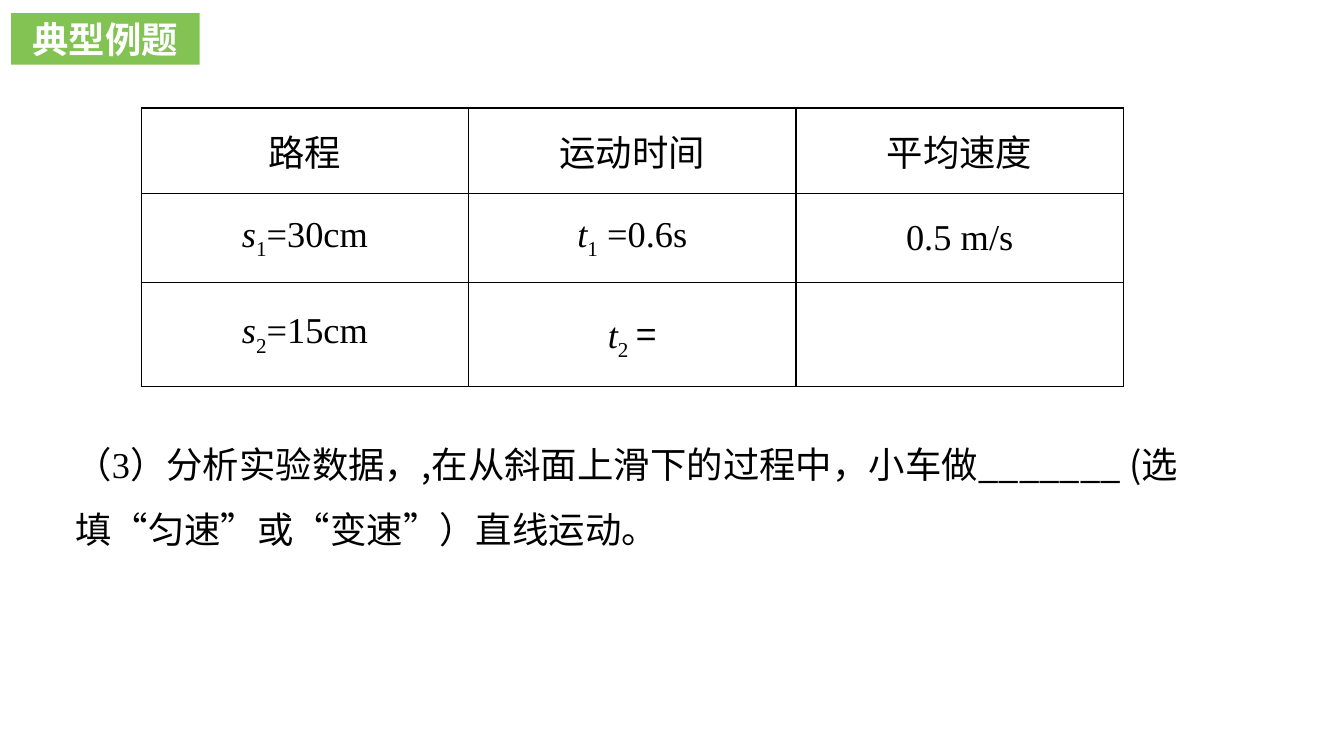
import pptx
import pptx.dml.color
import pptx.enum.text
import pptx.oxml
import pptx.oxml.ns
import pptx.util
from pptx.util import Cm

BLACK = pptx.dml.color.RGBColor(0x00, 0x00, 0x00)
WHITE = pptx.dml.color.RGBColor(0xFF, 0xFF, 0xFF)
GREEN = pptx.dml.color.RGBColor(0x83, 0xC3, 0x53)
SERIF = "Times New Roman"
SANS = "Noto Sans CJK SC"
CENTER = pptx.enum.text.PP_ALIGN.CENTER
MIDDLE = pptx.enum.text.MSO_ANCHOR.MIDDLE

HEADING = "典型例题"
QUESTION = [
    ("（3）", {"name": SERIF}),
    ("分析实验数据，,在从斜面上滑下的过程中，小车做_______ (选填“匀速”或“变速”）直线运动。", {"name": SANS}),
]


def quantity(symbol, index, value, value_font=SERIF):
    """Runs for an italic symbol with a subscript, followed by its value."""
    return [
        (symbol, {"name": SERIF, "italic": True}),
        (index, {"name": SERIF, "baseline": -25000}),
        (value, {"name": value_font}),
    ]


MEASUREMENTS = [
    [[(label, {"name": SANS})] for label in ("路程", "运动时间", "平均速度")],
    [quantity("s", "1", "=30cm"), quantity("t", "1", " =0.6s"), [("0.5 m/s", {"name": SERIF})]],
    [quantity("s", "2", "=15cm"), quantity("t", "2", " =", SANS), []],
]
COLUMN_WIDTH = Cm(8.25)
ROW_HEIGHTS = [Cm(2.16), Cm(2.24), Cm(2.62)]


def add_runs(paragraph, runs, color=BLACK):
    for text, formats in runs:
        run = paragraph.add_run()
        run.text = text
        run.font.color.rgb = color
        properties = run._r.get_or_add_rPr()
        settings = {"size": pptx.util.Pt(26), "bold": False, "italic": False, **formats}
        baseline = settings.pop("baseline", 0)
        if baseline:
            properties.set("baseline", str(baseline))
        for key, value in settings.items():
            setattr(run.font, key, value)
        east_asian = pptx.oxml.parse_xml(f'<a:ea {pptx.oxml.ns.nsdecls("a")} typeface="{SANS}"/>')
        properties.find(pptx.oxml.ns.qn("a:latin")).addnext(east_asian)


def add_borders(cell):
    properties = cell._tc.get_or_add_tcPr()
    for position, side in enumerate(("lnL", "lnR", "lnT", "lnB")):
        properties.insert(position, pptx.oxml.parse_xml(
            f'<a:{side} {pptx.oxml.ns.nsdecls("a")} w="12700">'
            f'<a:solidFill><a:srgbClr val="{BLACK}"/></a:solidFill></a:{side}>'))


def add_heading(slide):
    heading = slide.shapes.title
    places = {"left": Cm(0.28), "top": Cm(0.33), "width": Cm(4.75), "height": Cm(1.3)}
    for key, value in places.items():
        setattr(heading, key, value)
    heading._element.spPr.append(pptx.oxml.parse_xml(
        f'<a:prstGeom {pptx.oxml.ns.nsdecls("a")} prst="roundRect">'
        '<a:avLst><a:gd name="adj" fmla="val 50000"/></a:avLst></a:prstGeom>'))
    heading.fill.solid()
    heading.fill.fore_color.rgb = GREEN
    frame = heading.text_frame
    frame.auto_size = pptx.enum.text.MSO_AUTO_SIZE.NONE
    frame.word_wrap = True
    frame.vertical_anchor = MIDDLE
    frame.paragraphs[0].alignment = CENTER
    add_runs(frame.paragraphs[0], [(HEADING, {"name": SANS, "bold": True})], WHITE)


def add_measurements(slide):
    columns = len(MEASUREMENTS[0])
    table = slide.shapes.add_table(
        len(MEASUREMENTS), columns, Cm(3.56), Cm(2.72),
        columns * COLUMN_WIDTH, sum(ROW_HEIGHTS)).table
    table.first_row = False
    table.horz_banding = False
    for column in table.columns:
        column.width = COLUMN_WIDTH
    for row, height, contents in zip(table.rows, ROW_HEIGHTS, MEASUREMENTS):
        row.height = height
        for cell, runs in zip(row.cells, contents):
            cell.vertical_anchor = MIDDLE
            cell.fill.background()
            add_borders(cell)
            paragraph = cell.text_frame.paragraphs[0]
            paragraph.alignment = CENTER
            add_runs(paragraph, runs)


def add_question(slide):
    question = slide.shapes.add_textbox(Cm(1.65), Cm(10.46), Cm(28.52), Cm(3.4)).text_frame
    question.word_wrap = True
    question.paragraphs[0].line_spacing = 1.5
    add_runs(question.paragraphs[0], QUESTION)


def main():
    deck = pptx.Presentation()
    deck.slide_width = Cm(33.87)
    deck.slide_height = Cm(19.05)
    slide = deck.slides.add_slide(deck.slide_layouts[5])
    add_heading(slide)
    add_measurements(slide)
    add_question(slide)
    deck.save("out.pptx")


if __name__ == "__main__":
    main()
